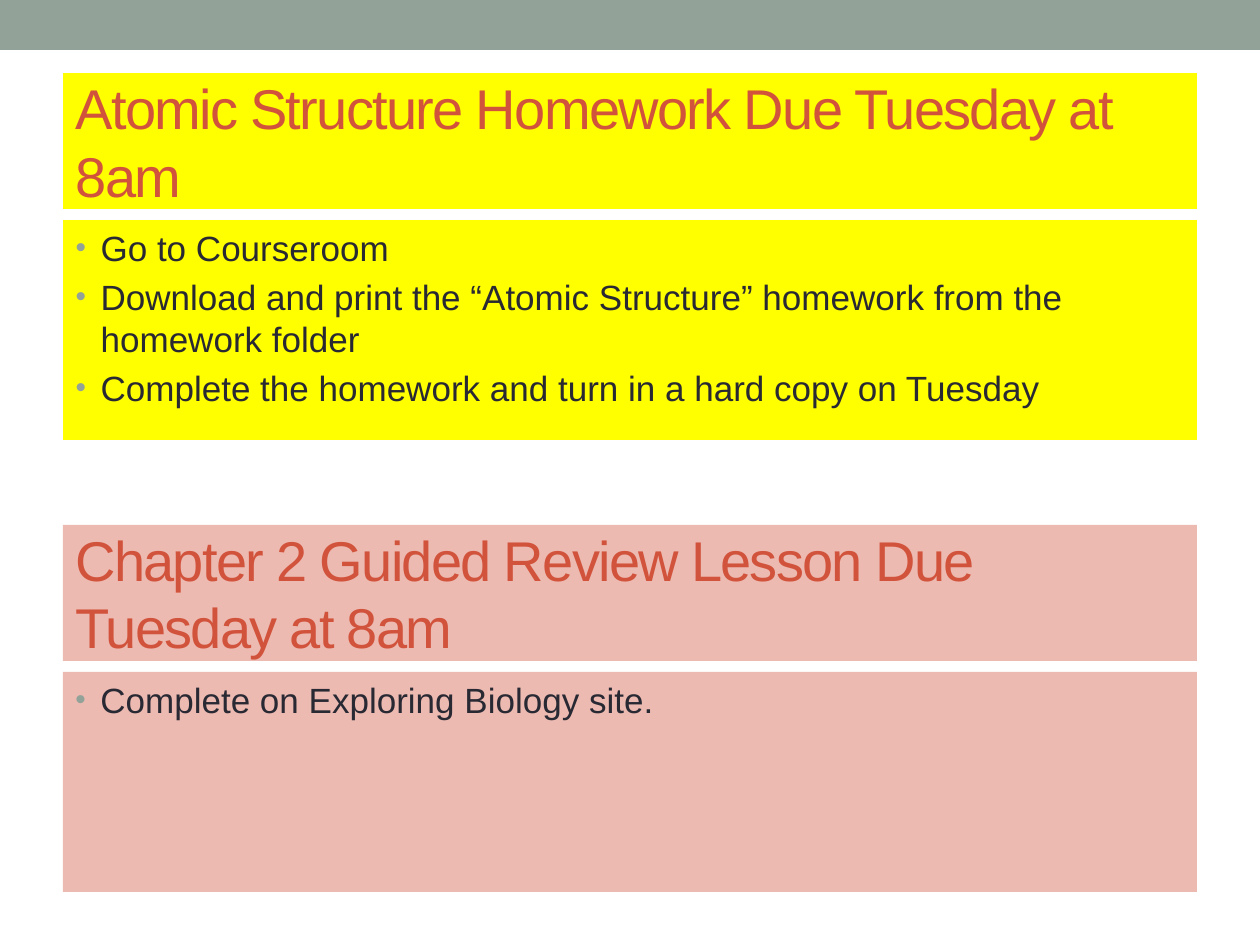
from lxml import etree
from pptx import Presentation
from pptx import util as u
from pptx.dml.color import RGBColor
from pptx.enum import shapes, text
from pptx.oxml import ns

PX = 914400 // 126
COLORS = {
    "bar": "93A299",
    "yellow": "FFFF00",
    "pink": "EDBAB1",
    "heading": "D2533C",
    "body": "292934",
}
LEFT, WIDTH = 63, 1134
HEADING_HEIGHT, LIST_HEIGHT, LIST_OFFSET = 136, 220, 147


def rgb(name):
    return RGBColor.from_string(COLORS[name])


def add_bullet(paragraph, indent):
    props = paragraph._p.get_or_add_pPr()
    props.set("marL", str(indent))
    props.set("indent", str(-indent))
    color = etree.SubElement(props, ns.qn("a:buClr"))
    etree.SubElement(color, ns.qn("a:srgbClr"), val=COLORS["bar"])
    etree.SubElement(props, ns.qn("a:buSzPct"), val="85000")
    etree.SubElement(props, ns.qn("a:buFont"), typeface="Arial")
    etree.SubElement(props, ns.qn("a:buChar"), char="•")


def write(paragraph, wording, size, color, spacing=None, before=0, bullet=False):
    paragraph.alignment = text.PP_ALIGN.LEFT
    paragraph.space_before = u.Pt(before)
    if bullet:
        add_bullet(paragraph, 25 * PX)
    run = paragraph.add_run()
    run.text = wording
    run.font.name = "Arial"
    run.font.size = u.Pt(size)
    run.font.color.rgb = rgb(color)
    if spacing is not None:
        run.font._element.set("spc", str(spacing * 100))


class HomeworkSlide:
    def __init__(self, deck):
        self.slide = deck.slides.add_slide(deck.slide_layouts[1])
        self.title, self.body = self.slide.placeholders

    def bar(self, height):
        band = self.slide.shapes.add_shape(
            shapes.MSO_SHAPE.RECTANGLE, 0, 0, 1260 * PX, height * PX)
        band.shadow.inherit = False
        band.fill.solid()
        band.fill.fore_color.rgb = rgb("bar")
        band.line.fill.background()

    def panel(self, holder, top, height, fill, anchor):
        box = [side * PX for side in (LEFT, top, WIDTH, height)]
        if holder is None:
            holder = self.slide.shapes.add_textbox(*box)
        else:
            holder.left, holder.top, holder.width, holder.height = box
        holder.fill.solid()
        holder.fill.fore_color.rgb = rgb(fill)
        frame = holder.text_frame
        frame.word_wrap = True
        frame.auto_size = text.MSO_AUTO_SIZE.NONE
        frame.vertical_anchor = anchor
        return frame

    def heading(self, wording, top, fill, holder=None):
        frame = self.panel(holder, top, HEADING_HEIGHT, fill, text.MSO_ANCHOR.MIDDLE)
        write(frame.paragraphs[0], wording, size=32, color="heading", spacing=-1)

    def bullets(self, items, top, fill, holder=None):
        frame = self.panel(holder, top, LIST_HEIGHT, fill, text.MSO_ANCHOR.TOP)
        for index, item in enumerate(items):
            paragraph = frame.add_paragraph() if index else frame.paragraphs[0]
            write(paragraph, item, size=20, color="body", before=4, bullet=True)

    def assignment(self, heading, items, top, fill, title=None, body=None):
        self.heading(heading, top, fill, title)
        self.bullets(items, top + LIST_OFFSET, fill, body)


def main():
    deck = Presentation()
    deck.slide_width, deck.slide_height = 1260 * PX, 945 * PX
    homework = HomeworkSlide(deck)
    homework.bar(50)
    homework.assignment(
        "Atomic Structure Homework Due Tuesday at 8am",
        ["Go to Courseroom",
         "Download and print the “Atomic Structure” homework from the homework folder",
         "Complete the homework and turn in a hard copy on Tuesday"],
        top=73, fill="yellow", title=homework.title, body=homework.body)
    homework.assignment(
        "Chapter 2 Guided Review Lesson Due Tuesday at 8am",
        ["Complete on Exploring Biology site."],
        top=525, fill="pink")
    deck.save("out.pptx")


if __name__ == "__main__":
    main()
